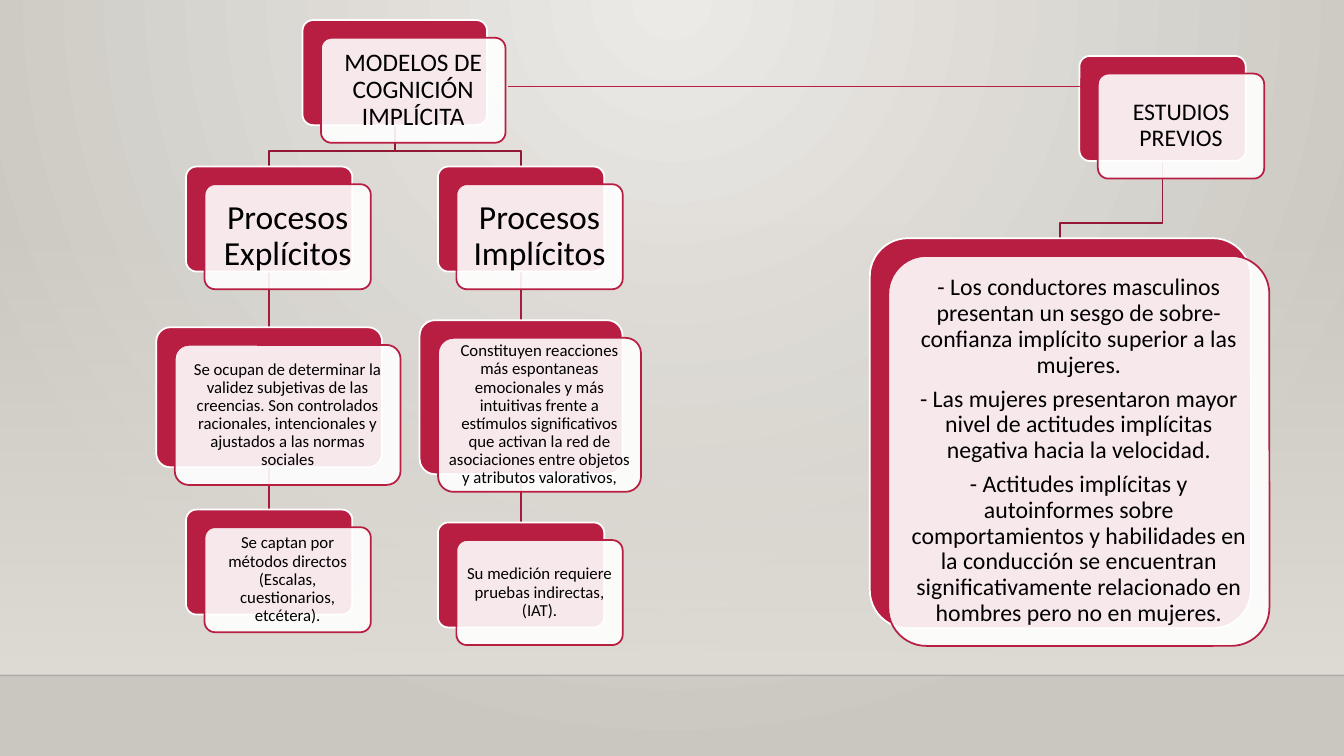
import pptx
import pptx.util
import pptx.dml.color
import pptx.enum.shapes
import pptx.enum.text
import pptx.oxml
import pptx.oxml.ns

Pt = pptx.util.Pt
qn = pptx.oxml.ns.qn
SHAPE = pptx.enum.shapes.MSO_SHAPE
STRAIGHT = pptx.enum.shapes.MSO_CONNECTOR.STRAIGHT
CRIMSON = "B71E42"


def rgb(code):
    return pptx.dml.color.RGBColor.from_string(code)


def add_line(x1, y1, x2, y2, colour, weight):
    line = slide.shapes.add_connector(STRAIGHT, Pt(x1), Pt(y1), Pt(x2), Pt(y2))
    line.line.color.rgb = rgb(colour)
    line.line.width = Pt(weight)
    properties = line._element.spPr
    properties.append(properties.makeelement(qn("a:effectLst"), {}))
    return line


deck = pptx.Presentation()
deck.slide_width, deck.slide_height = Pt(960), Pt(540)
slide = deck.slides.add_slide(deck.slide_layouts[6])

backdrop = slide.background.fill
backdrop.gradient()
for stop, colour in zip(backdrop.gradient_stops, ("ECEAE7", "CAC7C1")):
    stop.color.rgb = rgb(colour)
direction = next(slide._element.iter(qn("a:lin")))
direction.getparent().replace(direction, pptx.oxml.parse_xml(
    '<a:path xmlns:a="http://schemas.openxmlformats.org/drawingml/2006/main" path="circle">'
    '<a:fillToRect l="43000" t="0" r="43000" b="100000"/></a:path>'))

wall = slide.shapes.add_shape(SHAPE.RECTANGLE, 0, Pt(159), Pt(960), Pt(323.4))
wall.shadow.inherit = False
wall.line.fill.background()
wall.fill.gradient()
wall.fill.gradient_angle = 270
for stop in wall.fill.gradient_stops:
    stop.color.rgb = rgb("DFDBD5")
wall_top = next(wall._element.spPr.iter(qn("a:srgbClr")))
wall_top.append(wall_top.makeelement(qn("a:alpha"), {"val": "0"}))

floor_edge = add_line(0, 482.4, 960, 482.4, "000001", 1)
edge_colour = next(floor_edge._element.spPr.iter(qn("a:srgbClr")))
edge_colour.append(edge_colour.makeelement(qn("a:alpha"), {"val": "20000"}))

cards = {
    "modelos": (282, 14.4, 131.8, 75, 18, ["MODELOS DE COGNICIÓN IMPLÍCITA"]),
    "explícitos": (192.3, 119, 118.8, 75, 24, ["Procesos Explícitos"]),
    "validez": (192.3, 233.8, 161.3, 100, 12, [
        "Se ocupan de determinar la validez subjetivas de las creencias. Son controlados "
        "racionales, intencionales y ajustados a las normas sociales"]),
    "directos": (192.3, 364, 118.8, 75, 12, [
        "Se captan por métodos directos (Escalas, cuestionarios, etcétera)."]),
    "implícitos": (372.2, 119, 118.8, 75, 24, ["Procesos Implícitos"]),
    "reacciones": (372.2, 228.7, 145, 110, 12, [
        "Constituyen reacciones más espontaneas emocionales y más intuitivas frente a "
        "estímulos significativos que activan la red de asociaciones entre objetos y "
        "atributos valorativos,"]),
    "indirectas": (372.2, 373.2, 118.8, 75, 12, [
        "Su medición requiere pruebas indirectas, (IAT)."]),
    "estudios": (830.4, 40, 118.8, 75, 17, ["ESTUDIOS PREVIOS"]),
    "hallazgos": (757.4, 170.2, 272.2, 278.6, 17, [
        "- Los conductores masculinos presentan un sesgo de sobre-confianza implícito "
        "superior a las mujeres.",
        "- Las mujeres presentaron mayor nivel de actitudes implícitas negativa hacia la "
        "velocidad.",
        "- Actitudes implícitas y autoinformes sobre comportamientos y habilidades en la "
        "conducción se encuentran significativamente relacionado en hombres pero no en "
        "mujeres."]),
}
links = [
    ("estudios", "hallazgos"), ("reacciones", "indirectas"), ("implícitos", "reacciones"),
    ("modelos", "implícitos"), ("validez", "directos"), ("explícitos", "validez"),
    ("modelos", "explícitos"),
]

for parent, child in links:
    parent_x, parent_top, _, parent_height = cards[parent][:4]
    child_x, child_top = cards[child][:2]
    start = parent_top + parent_height
    if parent_x == child_x:
        add_line(parent_x, start, child_x, child_top, "A61B3C", 1.25)
        continue
    bend = child_top - 11
    outline = slide.shapes.build_freeform(Pt(parent_x), Pt(start))
    outline.add_line_segments(
        [(Pt(parent_x), Pt(bend)), (Pt(child_x), Pt(bend)), (Pt(child_x), Pt(child_top))],
        close=False)
    branch = outline.convert_to_shape()
    branch.shadow.inherit = False
    branch.fill.background()
    branch.line.color.rgb = rgb("931835")
    branch.line.width = Pt(1.25)

for center, top, width, height, size, paragraphs in cards.values():
    left = center - width / 2
    for shift_x, shift_y, fill, border in ((0, 0, CRIMSON, "FFFFFF"),
                                           (13.2, 12.6, "FFFFFF", CRIMSON)):
        card = slide.shapes.add_shape(SHAPE.ROUNDED_RECTANGLE, Pt(left + shift_x),
                                      Pt(top + shift_y), Pt(width), Pt(height))
        card.adjustments[0] = 0.1
        card.shadow.inherit = False
        card.fill.solid()
        card.fill.fore_color.rgb = rgb(fill)
        card.line.color.rgb = rgb(border)
        card.line.width = Pt(1.25)
    front_colour = next(card._element.spPr.iter(qn("a:srgbClr")))
    front_colour.append(front_colour.makeelement(qn("a:alpha"), {"val": "90000"}))

    frame = card.text_frame
    frame.word_wrap = True
    frame.vertical_anchor = pptx.enum.text.MSO_ANCHOR.MIDDLE
    frame.margin_left = frame.margin_right = Pt(size * 0.3)
    frame.margin_top = frame.margin_bottom = Pt(size * 0.3)
    for number, wording in enumerate(paragraphs):
        paragraph = frame.add_paragraph() if number else frame.paragraphs[0]
        paragraph.alignment = pptx.enum.text.PP_ALIGN.CENTER
        paragraph.line_spacing = 0.9
        if number:
            paragraph.space_before = Pt(size * 0.35)
        run = paragraph.add_run()
        run.text = wording
        run.font.name = "Calibri"
        run.font.size = Pt(size)
        run.font.color.rgb = rgb("000000")

add_line(363, 62, 775.5, 62, CRIMSON, 0.75)

deck.save("out.pptx")
